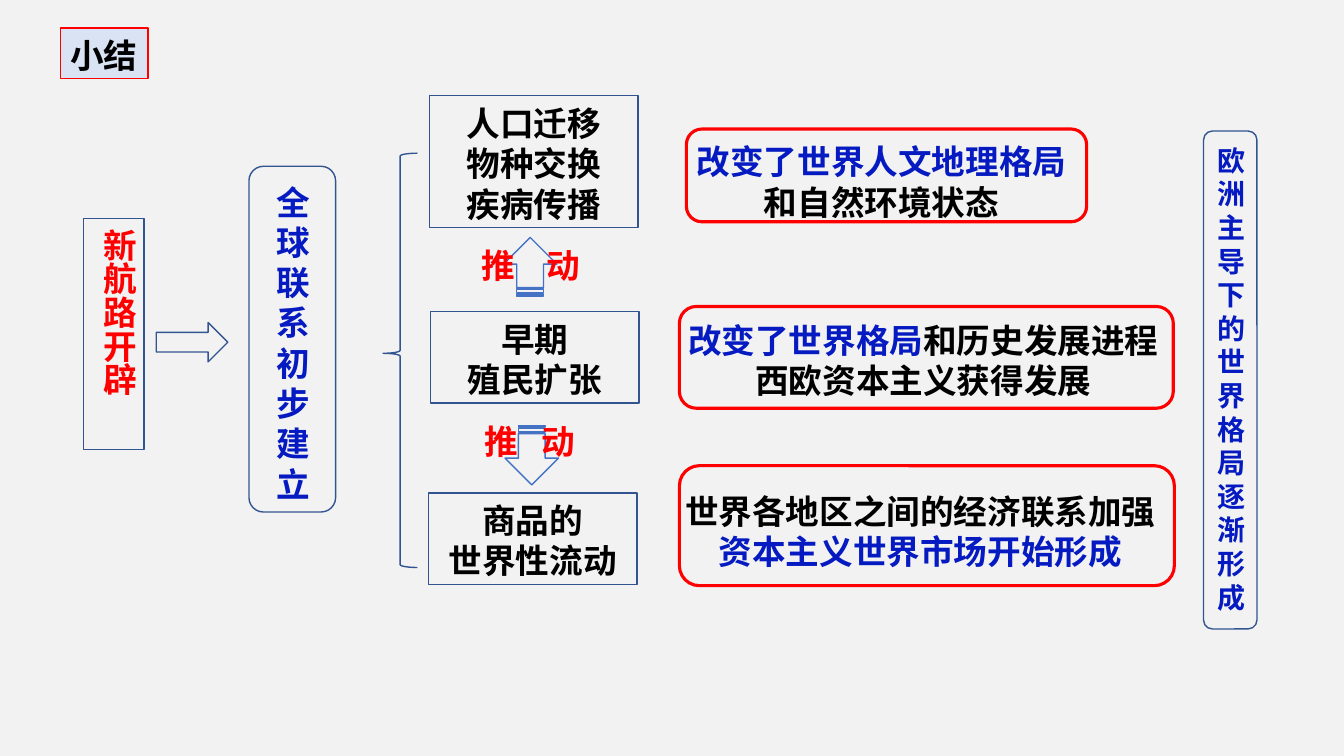
from pptx import Presentation
from pptx.dml.color import RGBColor
from pptx.enum.shapes import MSO_SHAPE
from pptx.enum.text import MSO_ANCHOR, PP_ALIGN
from pptx.oxml.ns import qn
from pptx.util import Inches, Pt
from lxml import etree

RECTANGLE = MSO_SHAPE.RECTANGLE
ROUNDED = MSO_SHAPE.ROUNDED_RECTANGLE
ALTERNATE = MSO_SHAPE.FLOWCHART_ALTERNATE_PROCESS
BRACE = MSO_SHAPE.LEFT_BRACE
RIGHT_ARROW = MSO_SHAPE.RIGHT_ARROW
STRIPED_ARROW = MSO_SHAPE.STRIPED_RIGHT_ARROW
TOP, MIDDLE = MSO_ANCHOR.TOP, MSO_ANCHOR.MIDDLE
CENTER, LEFT = PP_ALIGN.CENTER, PP_ALIGN.LEFT

COLUMNS, ROWS = 133.33, 75
CELL = Inches(0.1)
FONT = "Noto Sans CJK SC"
LINE_FACTOR = 1.2
COLORS = {
    "background": "F2F2F2",
    "navy": "325491",
    "arrow": "4472C4",
    "blue": "051BC1",
    "red": "FF0000",
    "black": "000000",
    "pale": "DAE3F3",
}
FRAME_FORMAT = {
    "word_wrap": True,
    "vertical_anchor": TOP,
    "margin_left": Inches(0.1),
    "margin_right": Inches(0.1),
    "margin_top": Inches(0.07),
    "margin_bottom": Inches(0.05),
}
PUSH_FORMAT = {
    "vertical_anchor": MIDDLE,
    "margin_left": Inches(0.06),
    "margin_right": Inches(0.06),
    "margin_top": Inches(0.06),
    "margin_bottom": Inches(0.06),
}
VERTICAL_FORMAT = {"margin_top": Inches(0.1), "margin_right": Inches(0.05)}


def color(name):
    return RGBColor.from_string(COLORS[name])


def set_all(target, values):
    for name, value in values.items():
        setattr(target, name, value)


def cells(*box):
    return [round(CELL * length) for length in box]


def write(shape, paragraphs, size=24, align=CENTER, gap=0, frame_format=None):
    frame = shape.text_frame
    set_all(frame, FRAME_FORMAT | (frame_format or {}))
    for index, runs in enumerate(paragraphs):
        paragraph = frame.add_paragraph() if index else frame.paragraphs[0]
        set_all(paragraph, {"alignment": align,
                            "line_spacing": Pt(size * LINE_FACTOR)})
        for position, (words, tone) in enumerate(runs):
            run = paragraph.add_run()
            run.text = words
            set_all(run.font, {"size": Pt(size), "bold": True, "name": FONT})
            run.font.color.rgb = color(tone)
            properties = run._r.get_or_add_rPr()
            etree.SubElement(properties, qn("a:ea")).set("typeface", FONT)
            if gap and position == 0:
                properties.set("spc", str(gap * 100))


def add_outline(slide, kind, box, line="navy", width=1, fill=None,
                rotation=0, adjustments=()):
    shape = slide.shapes.add_shape(kind, *cells(*box))
    shape.shadow.inherit = False
    shape.rotation = rotation
    for index, value in enumerate(adjustments):
        shape.adjustments[index] = value
    if fill:
        shape.fill.solid()
        shape.fill.fore_color.rgb = color(fill)
    else:
        shape.fill.background()
    shape.line.color.rgb = color(line)
    shape.line.width = Pt(width)
    return shape


def add_text(slide, box, paragraphs, **options):
    write(slide.shapes.add_textbox(*cells(*box)), paragraphs, **options)


def add_topic(slide, box, lines):
    shape = add_outline(slide, RECTANGLE, box)
    write(shape, [[(line, "black")] for line in lines])


def add_result(slide, frame_box, text_box, paragraphs):
    add_outline(slide, ALTERNATE, frame_box, "red", 2.25)
    add_text(slide, text_box, paragraphs)


def add_push(slide, arrow_box, rotation, text_box, gap):
    add_outline(slide, STRIPED_ARROW, arrow_box, "arrow", rotation=rotation)
    add_text(slide, text_box, [[("推", "red"), ("动", "red")]],
             gap=gap, frame_format=PUSH_FORMAT)


def add_pillar(slide, kind, frame_box, text_box, words, size):
    add_outline(slide, kind, frame_box)
    add_text(slide, text_box, [[(words, "blue")]], size=size)


def add_origin(slide):
    shape = add_outline(slide, RECTANGLE, (8.3, 21.7, 6, 22.9))
    write(shape, [[("新航路开辟", "red")]], align=LEFT,
          frame_format=VERTICAL_FORMAT)
    shape.text_frame._txBody.bodyPr.set("vert", "eaVert")
    add_outline(slide, RIGHT_ARROW, (15.5, 32, 7.1, 3.9))


def main():
    presentation = Presentation()
    set_all(presentation, {"slide_width": round(CELL * COLUMNS),
                           "slide_height": CELL * ROWS})
    slide = presentation.slides.add_slide(presentation.slide_layouts[6])
    slide.background.fill.solid()
    slide.background.fill.fore_color.rgb = color("background")

    title = add_outline(slide, RECTANGLE, (6, 2.8, 8.7, 5), "red", 1.25, "pale")
    write(title, [[("小结", "black")]], align=LEFT,
          frame_format={"word_wrap": False})

    add_origin(slide)
    add_pillar(slide, ROUNDED, (24.7, 16.5, 8.6, 34.3),
               (25, 17.3, 8.1, 33.3), "全球联系初步建立", 24)
    add_outline(slide, BRACE, (38, 15.2, 3.4, 41.1), adjustments=(0.083, 0.483))

    add_topic(slide, (42.6, 9.5, 20.7, 13.1), ["人口迁移", "物种交换", "疾病传播"])
    add_topic(slide, (42.7, 30.9, 20.7, 9.1), ["早期", "殖民扩张"])
    add_topic(slide, (42.5, 48.9, 20.7, 9.1), ["商品的", "世界性流动"])

    add_push(slide, (49.7, 23.8, 5.8, 5.3), 270, (45.4, 23.7, 14.5, 5.1), 22)
    add_push(slide, (49.8, 42.5, 5.9, 5.3), 90, (44.6, 41.2, 15.9, 5.1), 17)

    add_result(slide, (68.1, 12.8, 39.7, 9.2), (67.1, 13.3, 40.7, 9.1),
               [[("改变了世界人文地理格局", "blue"), ("和自然环境状态", "black")]])
    add_result(slide, (67.4, 30.4, 49, 10.1), (66.8, 31, 49.6, 9.1),
               [[("改变了世界格局", "blue"),
                 ("和历史发展进程西欧资本主义获得发展", "black")]])
    add_result(slide, (67.4, 46.2, 49.1, 11.9), (66.2, 48, 50.2, 9.1),
               [[("世界各地区之间的经济联系加强", "black")],
                [("资本主义世界市场开始形成", "blue")]])

    add_pillar(slide, ALTERNATE, (119.4, 13, 5.3, 49.4),
               (119.8, 13.5, 4.6, 48.1), "欧洲主导下的世界格局逐渐形成", 20)

    presentation.save("out.pptx")


if __name__ == "__main__":
    main()
